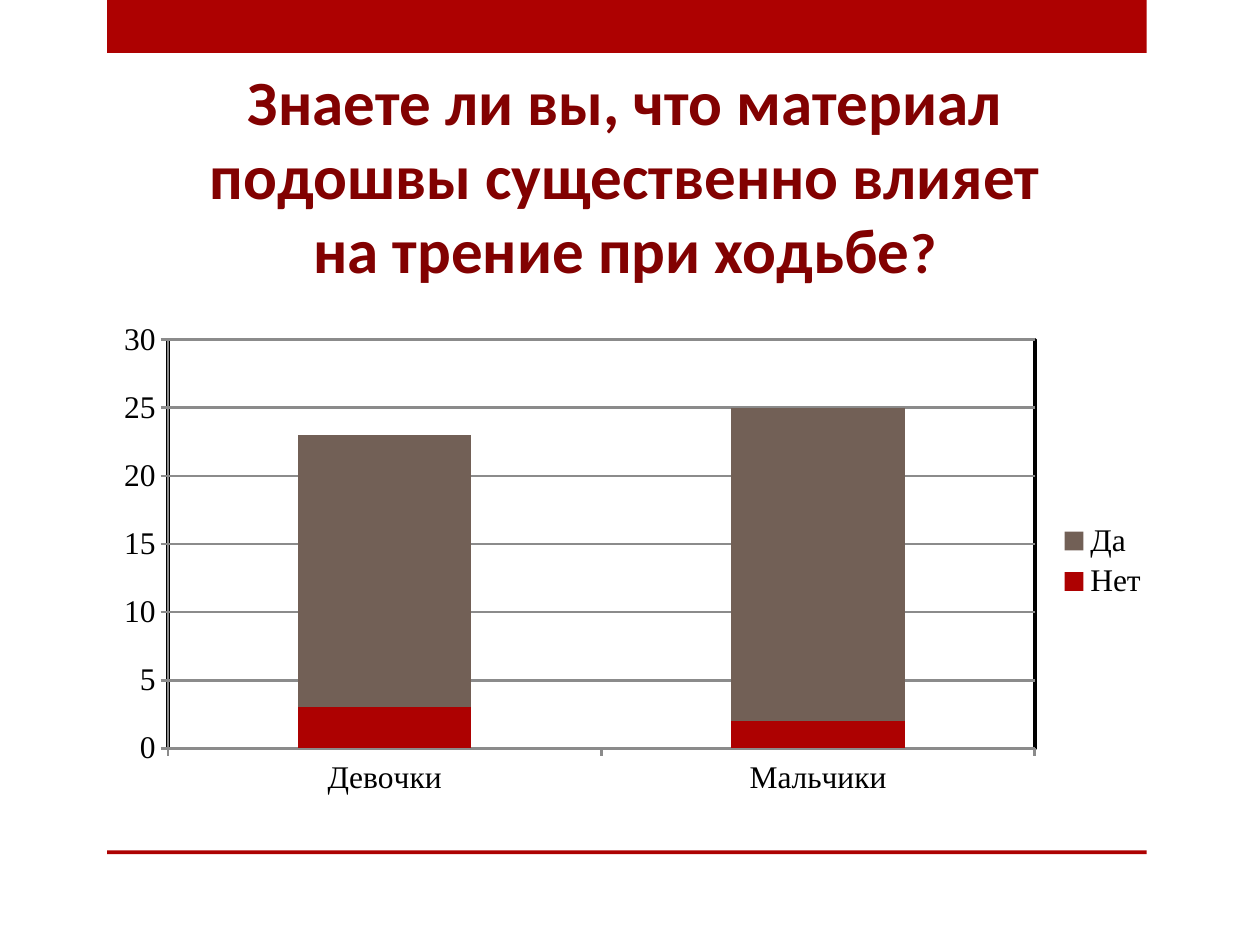
from lxml import etree
from pptx import Presentation
from pptx.chart.data import CategoryChartData
from pptx.dml.color import RGBColor
from pptx.enum.chart import XL_CHART_TYPE, XL_LEGEND_POSITION, XL_TICK_MARK
from pptx.enum.shapes import MSO_SHAPE
from pptx.enum.text import MSO_ANCHOR, PP_ALIGN
from pptx.util import Inches, Pt

RED = RGBColor(0xAD, 0x01, 0x01)
DARK = RGBColor(0x82, 0x01, 0x01)
BROWN = RGBColor(0x72, 0x60, 0x56)
GRAY = RGBColor(0x8B, 0x8B, 0x8B)
BLACK = RGBColor(0, 0, 0)
STACKED = XL_CHART_TYPE.COLUMN_STACKED
RIGHT = XL_LEGEND_POSITION.RIGHT
OUT = XL_TICK_MARK.OUTSIDE
RECT = MSO_SHAPE.RECTANGLE
BOTTOM = MSO_ANCHOR.BOTTOM
CENTER = PP_ALIGN.CENTER

LAYOUT = """<c:layout xmlns:c="http://schemas.openxmlformats.org/drawingml/2006/chart">
<c:manualLayout><c:layoutTarget val="inner"/><c:xMode val="edge"/><c:yMode val="edge"/>
<c:x val="0.06"/><c:y val="0.05"/><c:w val="0.82"/><c:h val="0.83"/>
</c:manualLayout></c:layout>"""
FRAME = """<c:spPr xmlns:c="http://schemas.openxmlformats.org/drawingml/2006/chart"
xmlns:a="http://schemas.openxmlformats.org/drawingml/2006/main">
<a:solidFill><a:srgbClr val="FFFFFF"/></a:solidFill>
<a:ln w="25400"><a:solidFill><a:srgbClr val="000000"/></a:solidFill></a:ln></c:spPr>"""


def add_text(para, text, size, color, font="Calibri", bold=True):
    run = para.add_run()
    run.text = text
    run.font.size = Pt(size)
    run.font.color.rgb = color
    run.font.name = font
    run.font.bold = bold


prs = Presentation()
prs.slide_width, prs.slide_height = Inches(10), Inches(7.5)
slide = prs.slides.add_slide(prs.slide_layouts[6])

# Bands at top and bottom
for top, height in ((0, 0.42), (6.75, 0.03)):
    band = slide.shapes.add_shape(RECT, Inches(0.85), Inches(top), Inches(8.25), Inches(height))
    band.shadow.inherit = False
    band.fill.solid()
    band.fill.fore_color.rgb = RED
    band.line.fill.background()

# Title
title = slide.shapes.add_textbox(Inches(1.46), Inches(0.44), Inches(7), Inches(1.9))
frame = title.text_frame
frame.word_wrap = True
frame.vertical_anchor = BOTTOM
para = frame.paragraphs[0]
para.alignment = CENTER
para.line_spacing = 0.98
add_text(para, "Знаете ли вы, что материал подошвы существенно влияет на трение при ходьбе", 36, DARK)
add_text(para, "?", 32.4, DARK)

# Stacked columns
data = CategoryChartData()
data.categories = ["Девочки", "Мальчики"]
data.add_series("Нет", (3, 2))
data.add_series("Да", (20, 23))
chart = slide.shapes.add_chart(
    STACKED, Inches(0.83), Inches(2.5), Inches(8.39), Inches(3.91), data).chart
chart.has_title = False
chart.font.size = Pt(18)
chart.font.name = "Times New Roman"
chart.font.color.rgb = BLACK
chart.has_legend = True
chart.legend.position = RIGHT
chart.legend.include_in_layout = False

plot = chart.plots[0]
plot.gap_width = 150
plot.overlap = 100
plot.vary_by_categories = False
for series, color in zip(plot.series, (RED, BROWN)):
    series.format.fill.solid()
    series.format.fill.fore_color.rgb = color

values = chart.value_axis
values.minimum_scale, values.maximum_scale, values.major_unit = 0, 30, 5
values.has_major_gridlines = True
for axis in (values, chart.category_axis):
    axis.major_tick_mark = OUT
for part in (values, chart.category_axis, values.major_gridlines):
    part.format.line.color.rgb = GRAY
    part.format.line.width = Pt(1.5)

area = chart.element.chart.plotArea
for old in area.findall("{*}layout"):
    area.remove(old)
area.insert(0, etree.fromstring(LAYOUT))
area.append(etree.fromstring(FRAME))

prs.save("out.pptx")
